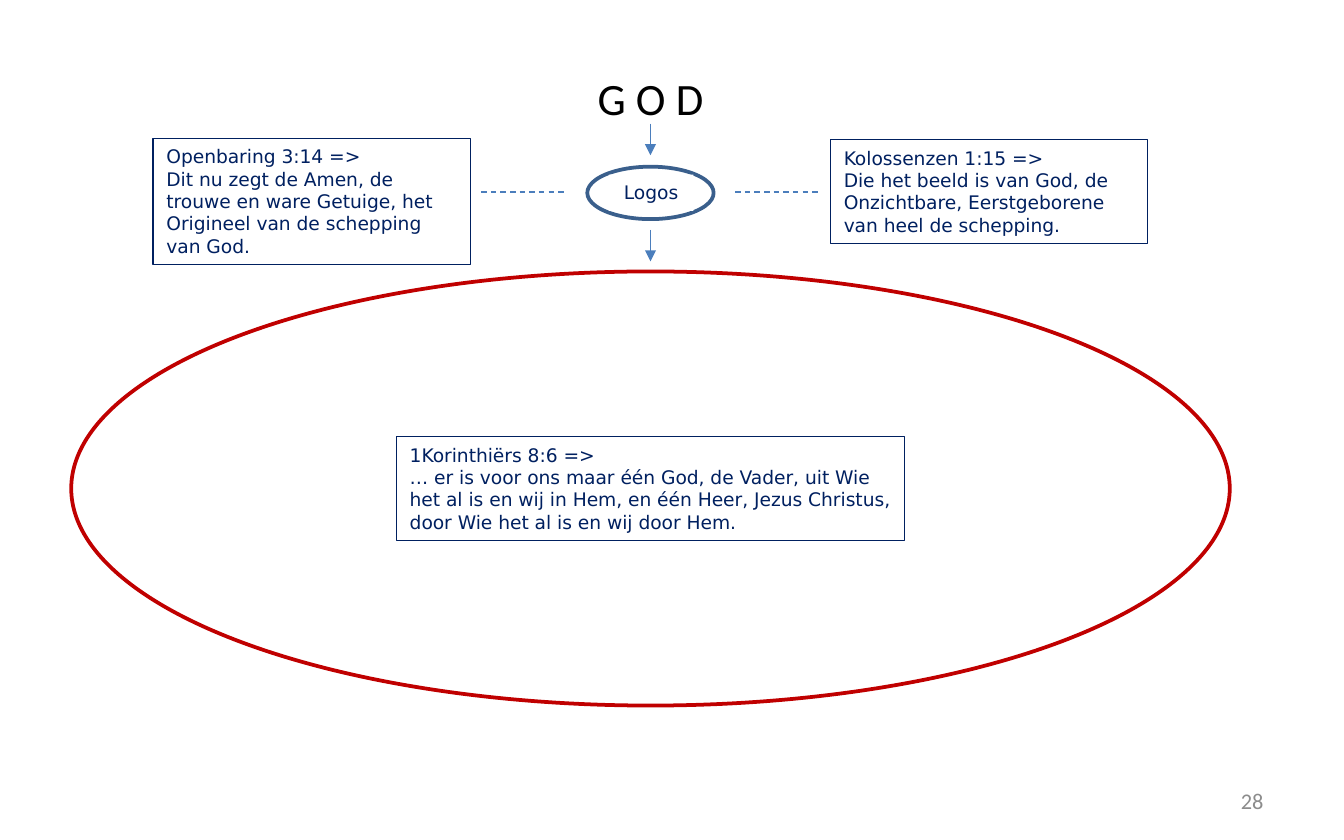
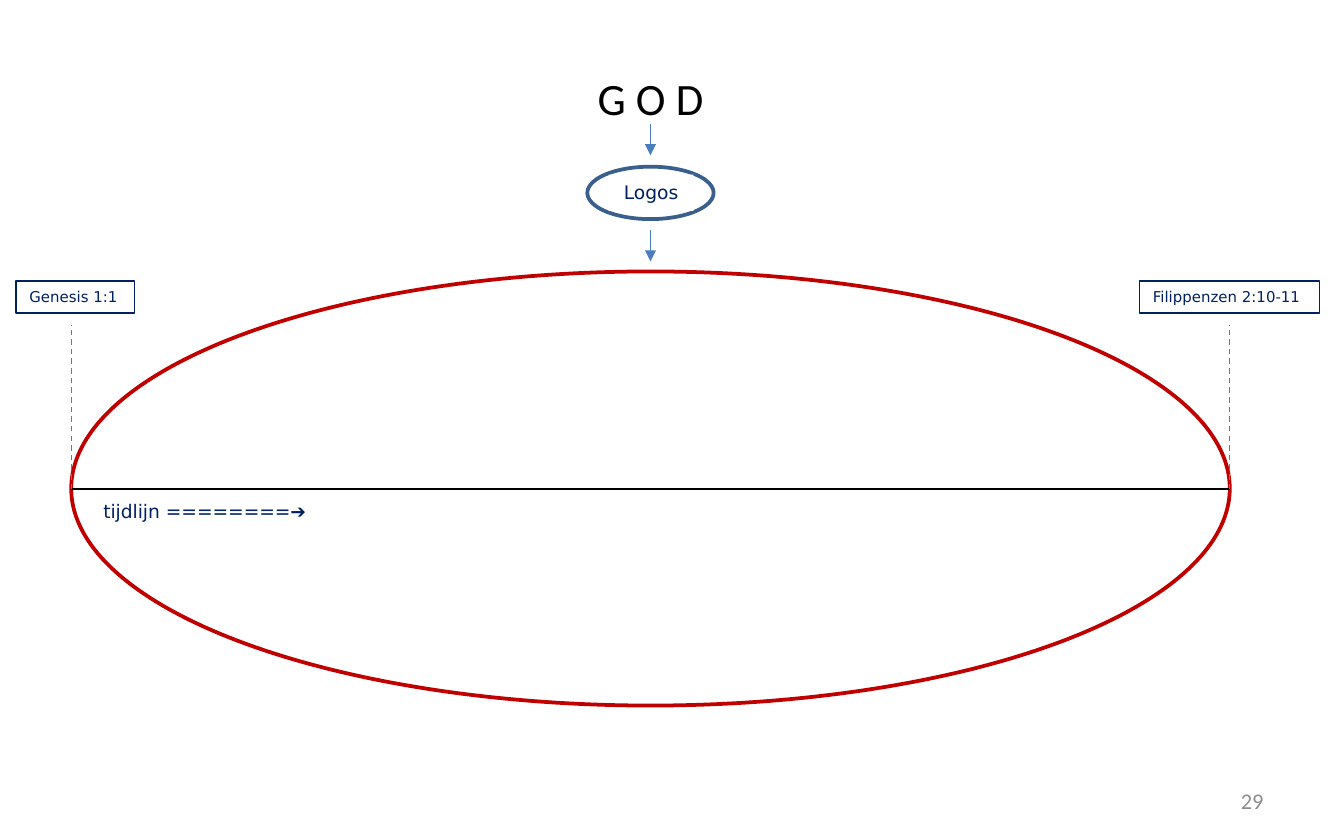
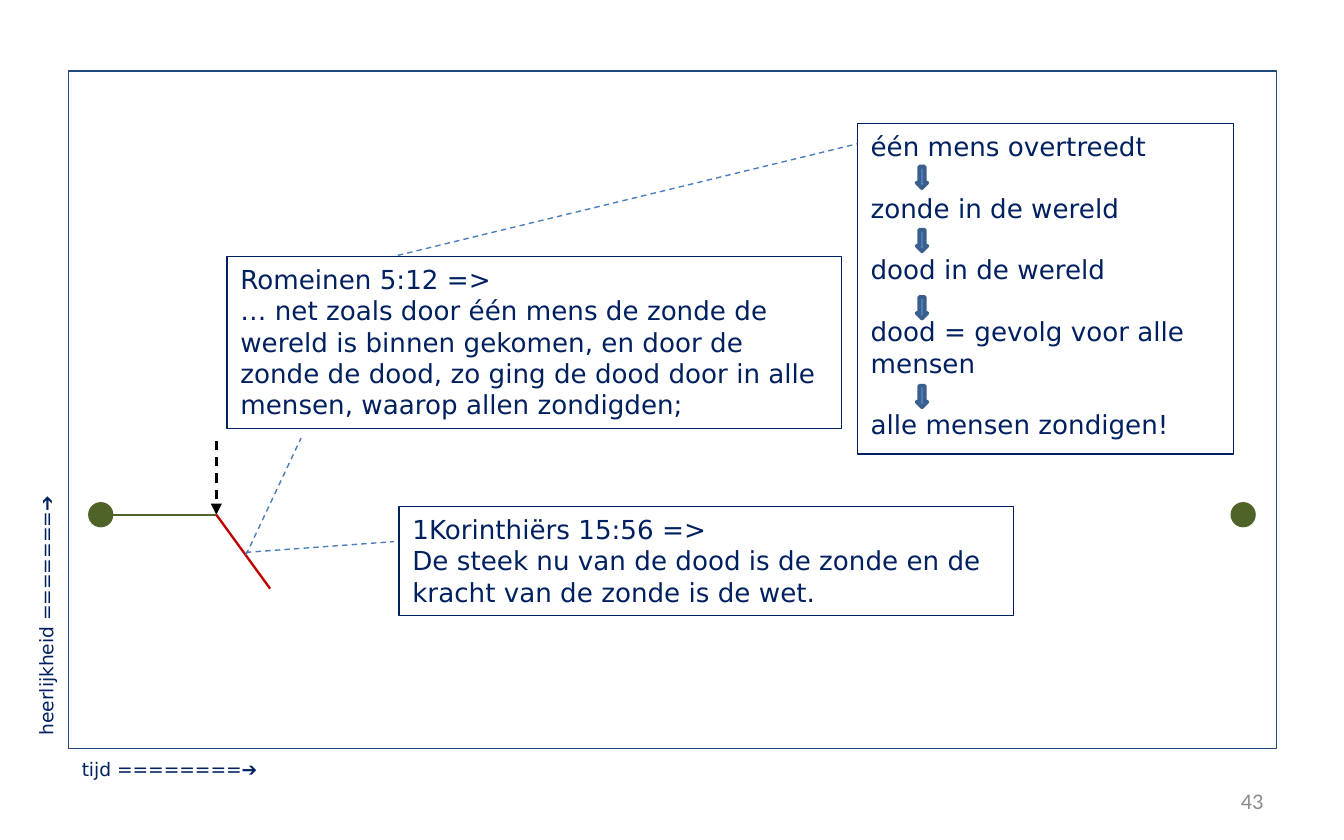
import copy

import pptx
import pptx.dml.color
import pptx.enum.dml
import pptx.enum.shapes
import pptx.enum.text
import pptx.oxml
import pptx.oxml.ns
import pptx.util

color = pptx.dml.color.RGBColor.from_string
qn = pptx.oxml.ns.qn
SHAPE = pptx.enum.shapes.MSO_SHAPE
ALIGN = pptx.enum.text.PP_ALIGN
ANCHOR = pptx.enum.text.MSO_ANCHOR

NAVY, BLUE, STEEL, RED = "002060", "4B7EBC", "3A5F8C", "C00000"
GREEN, BLACK, WHITE, GRAY = "4F6228", "000000", "FFFFFF", "8C8C8C"
BODY_FONT, HEADING_FONT = "DejaVu Sans", "Calibri"

presentation = pptx.Presentation()
presentation.slide_width = pptx.util.Inches(10)
presentation.slide_height = pptx.util.Inches(6.25)
cell = presentation.slide_width / 100  # square grid: 100 columns, 62.5 rows


def add_box(slide, place, paragraphs=(), kind=SHAPE.RECTANGLE, fill=None, line=None,
            weight=0.75, size=10, font=BODY_FONT, ink=NAVY, align=ALIGN.LEFT,
            anchor=ANCHOR.TOP, wrap=True, gap=0):
    """Place is left, top, width, height in grid cells; kind None gives a text box."""
    lengths = [round(length * cell) for length in place]
    if kind is None:
        shape = slide.shapes.add_textbox(*lengths)
    else:
        shape = slide.shapes.add_shape(kind, *lengths)
        shape.shadow.inherit = False
    if fill:
        shape.fill.solid()
        shape.fill.fore_color.rgb = color(fill)
    else:
        shape.fill.background()
    if line:
        shape.line.color.rgb = color(line)
        shape.line.width = pptx.util.Pt(weight)
    else:
        shape.line.fill.background()
    text_frame = shape.text_frame
    text_frame.word_wrap = wrap
    text_frame.vertical_anchor = anchor
    for index, text in enumerate(paragraphs):
        paragraph = text_frame.add_paragraph() if index else text_frame.paragraphs[0]
        paragraph.text = text
        paragraph.alignment = align
        if index:
            paragraph.space_before = pptx.util.Pt(gap)
        for run in paragraph.runs:
            run.font.size = pptx.util.Pt(size)
            run.font.name = font
            run.font.color.rgb = color(ink)
        for line_break in paragraph._p.findall(qn("a:br")):
            line_break.insert(0, copy.deepcopy(paragraph.runs[0]._r.rPr))
    return shape


def add_line(slide, start, end, ink=BLUE, weight=0.75, dashed=False, arrow=False):
    """Start and end are column, row."""
    connector = slide.shapes.add_connector(
        pptx.enum.shapes.MSO_CONNECTOR.STRAIGHT,
        *[round(length * cell) for length in (*start, *end)])
    connector.line.color.rgb = color(ink)
    connector.line.width = pptx.util.Pt(weight)
    if dashed:
        connector.line.dash_style = pptx.enum.dml.MSO_LINE.DASH
    properties = connector._element.spPr
    if arrow:
        tail = pptx.oxml.parse_xml(
            f'<a:tailEnd {pptx.oxml.ns.nsdecls("a")} type="triangle"/>')
        properties.find(qn("a:ln")).append(tail)
    properties.append(pptx.oxml.parse_xml(f'<a:effectLst {pptx.oxml.ns.nsdecls("a")}/>'))


# Page numbers
slides = []
for number in ("28", "29", "43"):
    slide = presentation.slides.add_slide(presentation.slide_layouts[6])
    add_box(slide, (71.7, 57.9, 23.3, 3.3), [number], kind=None, size=12,
            font=HEADING_FONT, ink=GRAY, align=ALIGN.RIGHT, anchor=ANCHOR.MIDDLE)
    slides.append(slide)
verses_slide, timeline_slide, glory_slide = slides

# God, Logos and creation, on the first two slides
center, world_left, world_width, world_middle = 48.4, 5.3, 86.2, 36.4
world_right = world_left + world_width
for slide in (verses_slide, timeline_slide):
    add_box(slide, (42.9, 4.5, 11, 5.5), ["G O D"], kind=None, size=24,
            font=HEADING_FONT, ink=BLACK, align=ALIGN.CENTER, anchor=ANCHOR.MIDDLE)
    add_box(slide, (43.7, 12.4, 9.4, 3.9), kind=SHAPE.OVAL, line=STEEL, weight=2)
    add_box(slide, (45.3, 13, 6.3, 2.7), ["Logos"], fill=WHITE, align=ALIGN.CENTER)
    add_box(slide, (world_left, 20.2, world_width, 32.3), kind=SHAPE.OVAL,
            line=RED, weight=2)
    for top in (9.2, 17.1):
        add_line(slide, (center, top), (center, top + 2.35), arrow=True)

# Slide 28: verses
for left in (35.8, 54.7):
    add_line(verses_slide, (left, 14.3), (left + 6.3, 14.3), dashed=True)
for place, verse in (
    ((61.8, 10.4, 23.6, 7.7),
     "Kolossenzen 1:15 =>\nDie het beeld is van God, de Onzichtbare, "
     "Eerstgeborene van heel de schepping."),
    ((11.4, 10.3, 23.6, 9.4),
     "Openbaring 3:14 =>\nDit nu zegt de Amen, de trouwe en ware Getuige, "
     "het Origineel van de schepping van God."),
    ((29.5, 32.5, 37.8, 7.7),
     "1Korinthiërs 8:6 =>\n… er is voor ons maar één God, de Vader, uit Wie het al is "
     "en wij in Hem, en één Heer, Jezus Christus, door Wie het al is en wij door Hem."),
):
    add_box(verses_slide, place, [verse], fill=WHITE, line=NAVY)

# Slide 29: timeline
add_line(timeline_slide, (world_left, world_middle), (world_right, world_middle),
         ink=BLACK, weight=1.25)
add_box(timeline_slide, (6.7, 36.7, 33.9, 2.7), ["tijdlijn ========➔"], fill=WHITE)
for column, left, width, verse in (
    (world_left, 1.2, 8.8, "Genesis 1:1"),
    (world_right, 84.8, 13.4, "Filippenzen 2:10-11"),
):
    add_line(timeline_slide, (column, world_middle), (column, 24.2), dashed=True)
    add_box(timeline_slide, (left, 20.9, width, 2.4), [verse], fill=WHITE, line=NAVY,
            size=8, wrap=False)

# Slide 43: glory against time
add_box(glory_slide, (5.1, 5.3, 89.9, 50.4), line="1F497D")
add_box(glory_slide, (5.1, 55.9, 18.9, 2.7), ["tijd ========➔"], fill=WHITE)
glory_axis = add_box(glory_slide, (-6.8, 44.1, 20.5, 2.7), ["heerlijkheid =======➔"],
                     fill=WHITE)
glory_axis.rotation = 270
for left in (91.7, 6.7):
    add_box(glory_slide, (left, 37.5, 1.6, 1.6), kind=SHAPE.FLOWCHART_CONNECTOR,
            fill=GREEN, line=GREEN, weight=2)
fall = (16.1, 38.3)
add_line(glory_slide, (8.3, 38.3), fall, ink=GREEN, weight=1.25)
add_line(glory_slide, fall, (20.1, 43.8), ink=RED, weight=1.25)
add_line(glory_slide, (16.1, 32.8), fall, ink=BLACK, weight=1.25, dashed=True, arrow=True)

for left, top, height, verse in (
    (16.9, 19.1, 12.8,
     "Romeinen 5:12 =>\n… net zoals door één mens de zonde de wereld is binnen gekomen, "
     "en door de zonde de dood, zo ging de dood door in alle mensen, "
     "waarop allen zondigden;"),
    (29.7, 37.7, 8.1,
     "1Korinthiërs 15:56 =>\nDe steek nu van de dood is de zonde en de kracht "
     "van de zonde is de wet."),
):
    add_box(glory_slide, (left, top, 45.7, height), [verse], fill=WHITE, line=NAVY, size=14)

steps = ["één mens overtreedt", "zonde in de wereld", "dood in de wereld",
         "dood = gevolg voor alle mensen", "alle mensen zondigen!"]
add_box(glory_slide, (63.8, 9.2, 28, 24.6), steps, fill=WHITE, line=NAVY, size=14, gap=16.3)
for top in (12.4, 17.1, 22.1, 28.7):
    add_box(glory_slide, (68.2, top, 0.8, 1.6), kind=SHAPE.DOWN_ARROW,
            fill="4F81BD", line=STEEL, weight=2)
for start, end in (
    ((18.3, 41.3), (22.4, 32.6)),
    ((18.3, 41.1), (29.3, 40.3)),
    ((29.6, 19), (63.8, 10.7)),
):
    add_line(glory_slide, start, end, dashed=True)

presentation.save("out.pptx")
